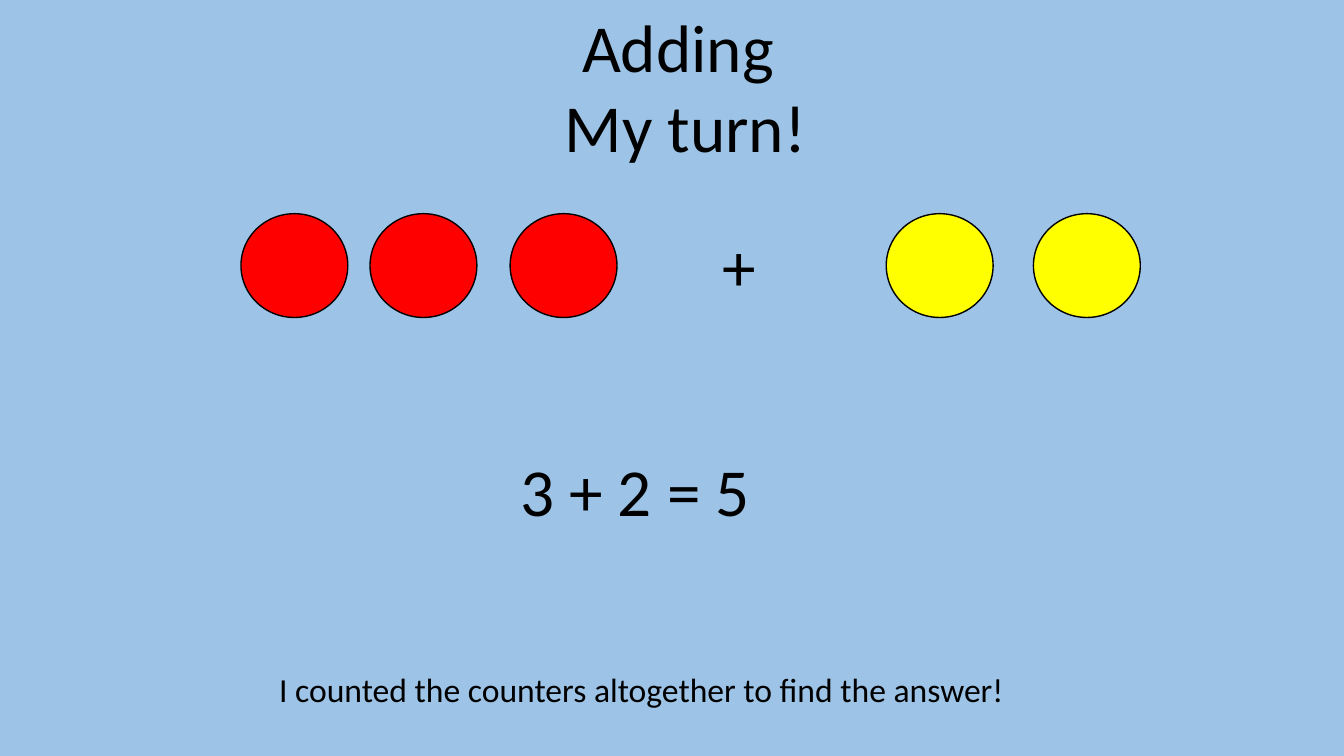
"""Build a slide that adds red and yellow counters."""
from dataclasses import dataclass

from pptx import Presentation
from pptx.dml.color import RGBColor
from pptx.enum.shapes import MSO_SHAPE
from pptx.enum.text import MSO_ANCHOR, MSO_AUTO_SIZE, PP_ALIGN
from pptx.util import Inches, Pt

OVAL = MSO_SHAPE.OVAL
TOP = MSO_ANCHOR.TOP
NO_FIT = MSO_AUTO_SIZE.NONE
LEFT, CENTER = PP_ALIGN.LEFT, PP_ALIGN.CENTER
TITLE_ONLY = 5


@dataclass(frozen=True)
class Theme:
    font: str = "Calibri"
    large: int = 48
    small: int = 24
    ink: str = "000000"
    background: str = "9DC3E6"
    red: str = "FF0000"
    yellow: str = "FFFF00"


class SlideBuilder:
    def __init__(self, prs, theme):
        self.theme = theme
        self.s = prs.slides.add_slide(prs.slide_layouts[TITLE_ONLY])
        fill = self.s.background.fill
        fill.solid()
        fill.fore_color.rgb = RGBColor.from_string(theme.background)

    def set_text(self, sp, text, size, align):
        tf = sp.text_frame
        tf.text = text
        tf.word_wrap = True
        tf.auto_size = NO_FIT
        tf.vertical_anchor = TOP
        for p in tf.paragraphs:
            p.alignment = align
            for r in p.runs:
                r.font.name = self.theme.font
                r.font.size = Pt(size)
                r.font.color.rgb = RGBColor.from_string(self.theme.ink)

    def title(self, text, left, top, width, height):
        sp = self.s.shapes.title
        sp.left, sp.top = Inches(left), Inches(top)
        sp.width, sp.height = Inches(width), Inches(height)
        self.set_text(sp, text, self.theme.large, CENTER)

    def text(self, text, size, left, top, width, height):
        sp = self.s.shapes.add_textbox(
            Inches(left), Inches(top), Inches(width), Inches(height))
        self.set_text(sp, text, size, LEFT)

    def counter(self, color, left, top):
        sp = self.s.shapes.add_shape(
            OVAL, Inches(left), Inches(top), Inches(1.06), Inches(1.03))
        sp.shadow.inherit = False
        sp.fill.solid()
        sp.fill.fore_color.rgb = RGBColor.from_string(color)
        sp.line.color.rgb = RGBColor.from_string(self.theme.ink)
        sp.line.width = Pt(1)


def main():
    prs = Presentation()
    prs.slide_width, prs.slide_height = Inches(13.33), Inches(7.5)
    theme = Theme()
    slide = SlideBuilder(prs, theme)

    slide.title("Adding \nMy turn!", 1.23, 0, 11.14, 1.72)
    counters = {theme.red: (2.39, 3.67, 5.06), theme.yellow: (8.79, 10.25)}
    for color, lefts in counters.items():
        for left in lefts:
            slide.counter(color, left, 2.12)
    slide.text("+", theme.large, 7.07, 2.18, 1.72, 0.91)
    slide.text("3 + 2 = 5", theme.large, 5.06, 4.41, 2.7, 0.91)
    slide.text("I counted the counters altogether to find the answer!",
               theme.small, 2.67, 6.59, 8.79, 0.5)

    prs.save("out.pptx")


if __name__ == "__main__":
    main()
